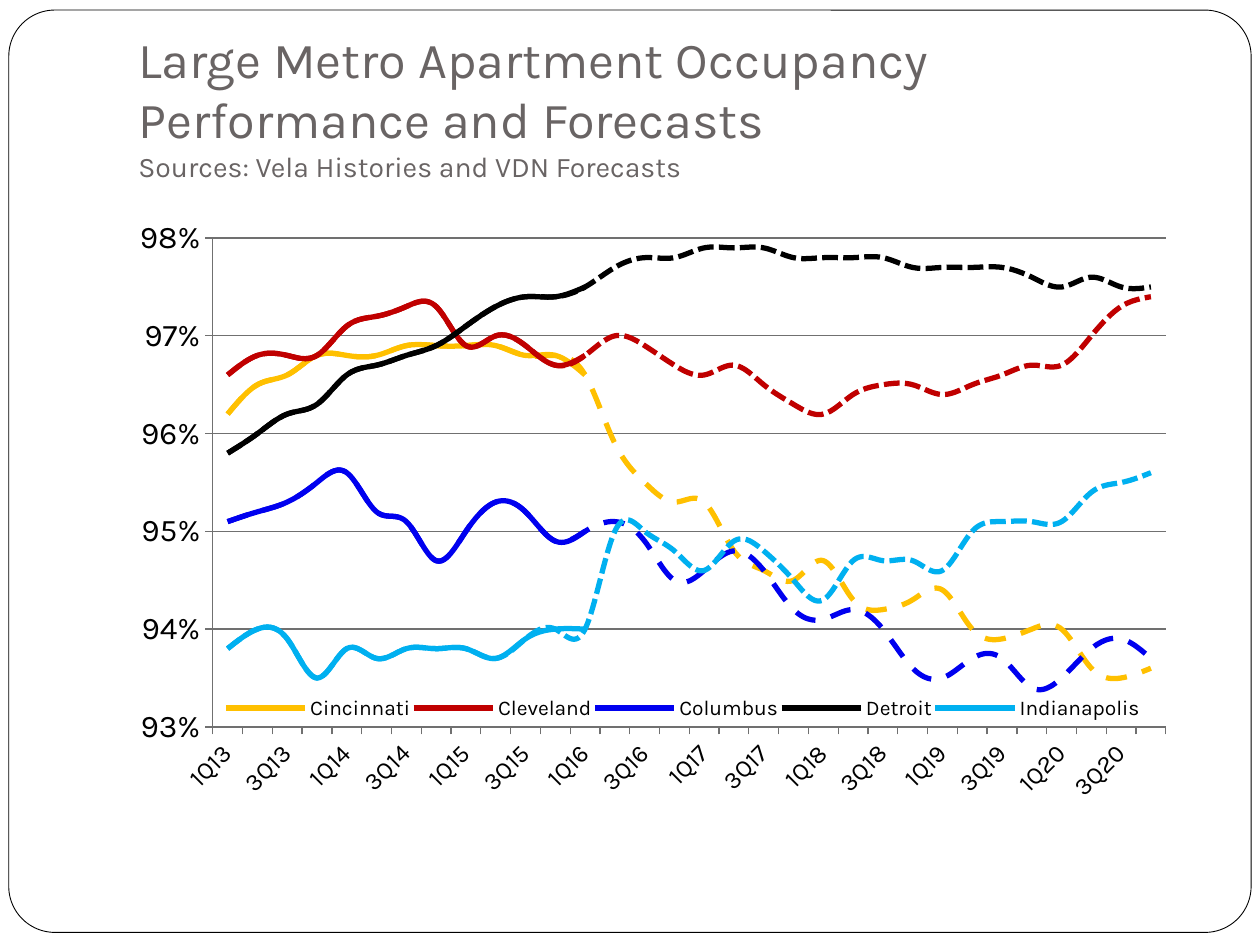
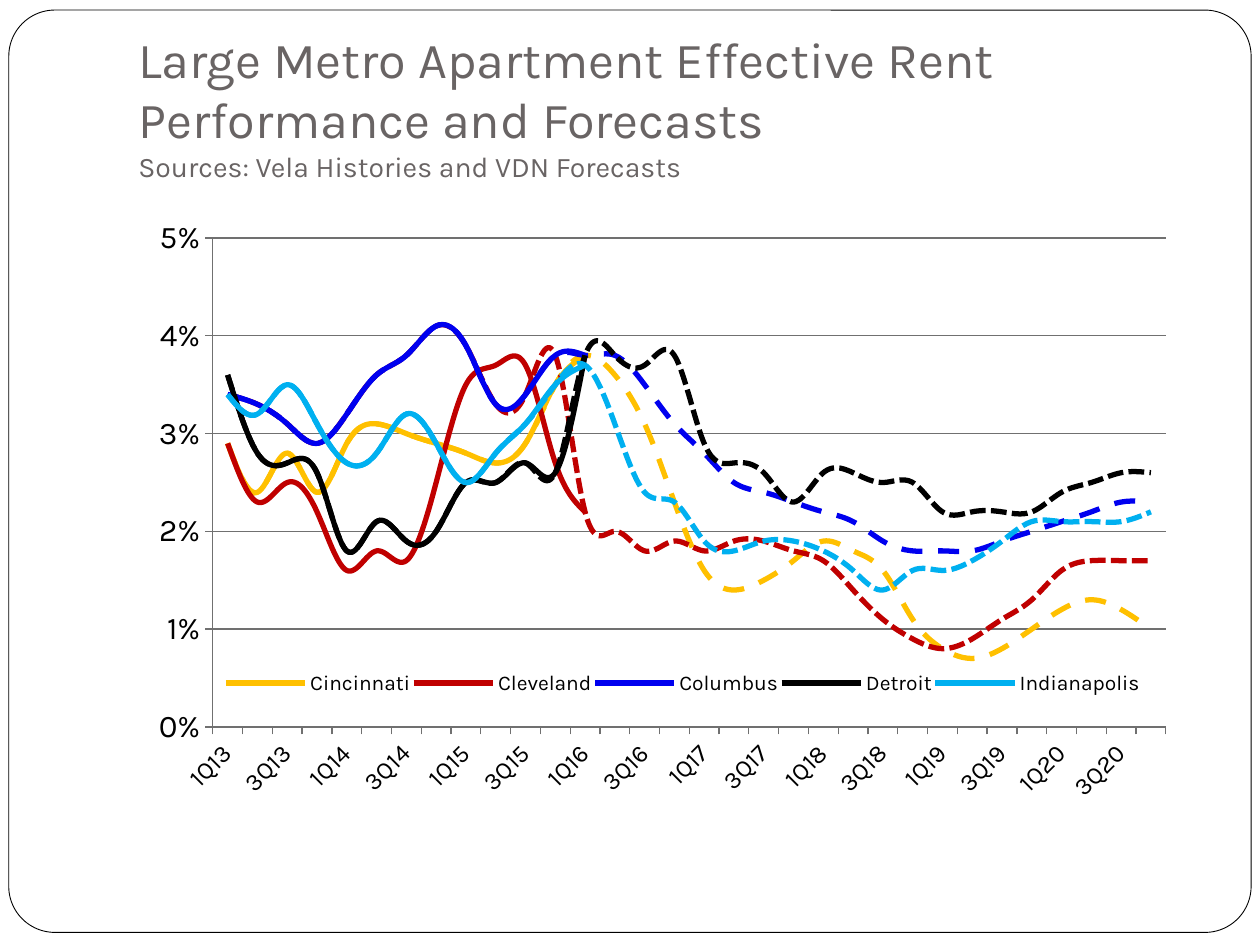
from lxml import etree
from pptx import Presentation
from pptx.chart.data import CategoryChartData
from pptx.dml.color import RGBColor
from pptx.enum.chart import XL_CHART_TYPE, XL_LEGEND_POSITION, XL_TICK_MARK
from pptx.enum.dml import MSO_LINE
from pptx.enum.shapes import MSO_SHAPE
from pptx.enum.text import MSO_ANCHOR
from pptx.oxml import parse_xml
from pptx.oxml.ns import qn
from pptx.util import Inches, Pt

FONT = "Karla"
BLACK, WHITE, TITLE_GREY, GRID_GREY = "000000", "FFFFFF", "696464", "707070"
FRAME_BOX = (0.07, 0.08, 9.86, 7.32)
TITLE_BOX = (1, 0.3, 8.5, 1.25)
CHART_BOX = (1, 1.67, 8.5, 5)
PLOT_LAYOUT = (0.081, 0.044, 0.89, 0.776)
SOURCES = "Sources: Vela Histories and VDN Forecasts"

QUARTERS = [f"{q}Q{year}" for year in range(13, 21) for q in range(1, 5)]
HISTORY_LENGTH = 13  # 1Q13 to 1Q16

# City: line colour and dash of its forecast
CITIES = {
    "Cincinnati": ("FFC000", MSO_LINE.DASH),
    "Cleveland": ("C00000", MSO_LINE.SQUARE_DOT),
    "Columbus": ("0000EF", MSO_LINE.DASH),
    "Detroit": ("000000", MSO_LINE.SQUARE_DOT),
    "Indianapolis": ("00B0F0", MSO_LINE.SQUARE_DOT),
}

# Quarterly values in tenths of a percent
OCCUPANCY = {
    "Cincinnati": [962, 965, 966, 968, 968, 968, 969, 969, 969, 969, 968,
                   968, 966, 959, 955, 953, 953, 948, 946, 945, 947, 943,
                   942, 943, 944, 940, 939, 940, 940, 936, 935, 936],
    "Cleveland": [966, 968, 968, 968, 971, 972, 973, 973, 969, 970, 969,
                  967, 968, 970, 969, 967, 966, 967, 965, 963, 962, 964,
                  965, 965, 964, 965, 966, 967, 967, 970, 973, 974],
    "Columbus": [951, 952, 953, 955, 956, 952, 951, 947, 950, 953, 952,
                 949, 950, 951, 949, 945, 946, 948, 946, 942, 941, 942,
                 940, 936, 935, 937, 937, 934, 935, 938, 939, 937],
    "Detroit": [958, 960, 962, 963, 966, 967, 968, 969, 971, 973, 974,
                974, 975, 977, 978, 978, 979, 979, 979, 978, 978, 978,
                978, 977, 977, 977, 977, 976, 975, 976, 975, 975],
    "Indianapolis": [938, 940, 939, 935, 938, 937, 938, 938, 938, 937, 939,
                     940, 940, 950, 950, 948, 946, 949, 948, 945, 943, 947,
                     947, 947, 946, 950, 951, 951, 951, 954, 955, 956],
}
RENT = {
    "Cincinnati": [29, 24, 28, 24, 29, 31, 30, 29, 28, 27, 29,
                   35, 38, 36, 31, 23, 16, 14, 15, 17, 19, 18,
                   16, 11, 8, 7, 8, 10, 12, 13, 12, 10],
    "Cleveland": [34, 33, 31, 29, 32, 36, 38, 41, 39, 33, 34,
                  38, 22, 20, 18, 19, 18, 19, 19, 18, 17, 14,
                  11, 9, 8, 9, 11, 13, 16, 17, 17, 17],
    "Columbus": [34, 33, 31, 29, 32, 36, 38, 41, 39, 33, 34,
                 38, 38, 38, 35, 31, 28, 25, 24, 23, 22, 21,
                 19, 18, 18, 18, 19, 20, 21, 22, 23, 23],
    "Detroit": [36, 28, 27, 26, 18, 21, 19, 20, 25, 25, 27,
                26, 38, 38, 37, 38, 29, 27, 26, 23, 26, 26,
                25, 25, 22, 22, 22, 22, 24, 25, 26, 26],
    "Indianapolis": [34, 32, 35, 31, 27, 28, 32, 29, 25, 28, 31,
                     35, 37, 31, 24, 23, 19, 18, 19, 19, 18, 16,
                     14, 16, 16, 17, 19, 21, 21, 21, 21, 22],
}
# Histories that differ from the start of the forecast line
RENT_HISTORY = {
    "Cleveland": [29, 23, 25, 22, 16, 18, 17, 25, 35, 37, 37, 27, 22],
}


def rgb(value):
    return RGBColor.from_string(value)


def inches(box):
    return [Inches(v) for v in box]


def style_font(font, size, color):
    font.name, font.size = FONT, Pt(size)
    font.color.rgb = rgb(color)


def style_line(line, color, width):
    line.color.rgb = rgb(color)
    line.width = Pt(width)


def chart_element(tag, val):
    element = etree.Element(qn(tag))
    element.set("val", str(val))
    return element


def manual_layout(box, inner=False):
    """Layout element for a box given as fractions of the chart."""
    target = '<c:layoutTarget val="inner"/>' if inner else ""
    modes = "".join(f'<c:{k}Mode val="edge"/>' for k in "xy")
    sizes = "".join(f'<c:{k} val="{v}"/>' for k, v in zip("xywh", box))
    return parse_xml(
        '<c:layout xmlns:c="http://schemas.openxmlformats.org/drawingml/2006/chart">'
        f"<c:manualLayout>{target}{modes}{sizes}</c:manualLayout></c:layout>")


def add_frame(s, box):
    frame = s.shapes.add_shape(MSO_SHAPE.ROUNDED_RECTANGLE, *inches(box))
    frame.adjustments[0] = 0.05
    frame.shadow.inherit = False
    frame.fill.solid()
    frame.fill.fore_color.rgb = rgb(WHITE)
    style_line(frame.line, BLACK, 0.5)


def add_title(s, box, title):
    tf = s.shapes.add_textbox(*inches(box)).text_frame
    tf.word_wrap = True
    tf.vertical_anchor = MSO_ANCHOR.BOTTOM
    tf.margin_bottom = Inches(0.1)
    p = tf.paragraphs[0]
    r = p.add_run()
    r.text = title
    style_font(r.font, 28.8, TITLE_GREY)
    p.add_line_break()
    r = p.add_run()
    r.text = SOURCES
    style_font(r.font, 16.2, TITLE_GREY)


def city_chart_data(forecasts, histories):
    data = CategoryChartData(number_format="0.0%")
    data.categories = QUARTERS
    for i, city in enumerate(CITIES):
        forecast = forecasts[city]
        history = histories.get(city, forecast[:HISTORY_LENGTH])
        gap = [None] * (len(QUARTERS) - HISTORY_LENGTH)
        data.add_series(city, [v / 1000 for v in history] + gap)
        data.add_series(f"Series {2 * i + 2}", [v / 1000 for v in forecast])
    return data


def style_axes(chart, low, high):
    values, quarters = chart.value_axis, chart.category_axis
    values.minimum_scale, values.maximum_scale = low, high
    values.major_unit = 0.01
    values.tick_labels.number_format = "0%"
    values.tick_labels.number_format_is_linked = False
    values.has_major_gridlines = True
    style_line(values.major_gridlines.format.line, GRID_GREY, 0.75)
    for axis, size in ((values, 18), (quarters, 14)):
        axis.major_tick_mark = XL_TICK_MARK.OUTSIDE
        axis.minor_tick_mark = XL_TICK_MARK.NONE
        style_line(axis.format.line, GRID_GREY, 0.75)
        style_font(axis.tick_labels.font, size, BLACK)
    # Slanted labels on every second quarter
    axis_xml = quarters._element
    axis_xml.find(qn("c:txPr")).find(qn("a:bodyPr")).set("rot", "-2700000")
    axis_xml.find(qn("c:noMultiLvlLbl")).addprevious(
        chart_element("c:tickLblSkip", 2))


def style_legend(chart, top):
    chart.has_legend = True
    legend = chart.legend
    legend.position = XL_LEGEND_POSITION.RIGHT
    legend.include_in_layout = True
    style_font(legend.font, 12, BLACK)
    # Only the history lines are listed
    position = legend._element.find(qn("c:legendPos"))
    for old in legend._element.findall(qn("c:layout")):
        legend._element.remove(old)
    position.addnext(manual_layout((0.09, top, 0.86, 0.06)))
    for i in reversed(range(1, 2 * len(CITIES), 2)):
        entry = etree.Element(qn("c:legendEntry"))
        entry.append(chart_element("c:idx", i))
        entry.append(chart_element("c:delete", 1))
        position.addnext(entry)


def add_city_chart(s, box, data, low, high, legend_top):
    chart = s.shapes.add_chart(XL_CHART_TYPE.LINE, *inches(box), data).chart
    chart.has_title = False
    style_font(chart.font, 18, BLACK)
    plot = chart.plots[0]
    plot.vary_by_categories = False
    # Solid history and dashed forecast for each city
    for i, (color, dash) in enumerate(CITIES.values()):
        history, forecast = plot.series[2 * i], plot.series[2 * i + 1]
        for series in (history, forecast):
            series.smooth = True
            style_line(series.format.line, color, 3)
        forecast.format.line.dash_style = dash
    style_axes(chart, low, high)
    style_legend(chart, legend_top)
    plot_area = chart._chartSpace.chart.plotArea
    for old in plot_area.findall(qn("c:layout")):
        plot_area.remove(old)
    plot_area.insert(0, manual_layout(PLOT_LAYOUT, inner=True))


def add_chart_slide(prs, title, data, low, high, legend_top):
    s = prs.slides.add_slide(prs.slide_layouts[6])
    add_frame(s, FRAME_BOX)
    add_title(s, TITLE_BOX, title)
    add_city_chart(s, CHART_BOX, data, low, high, legend_top)


def main():
    prs = Presentation()
    prs.slide_width, prs.slide_height = Inches(10), Inches(7.5)
    add_chart_slide(
        prs, "Large Metro Apartment Occupancy Performance and Forecasts",
        city_chart_data(OCCUPANCY, {}), 0.93, 0.98, 0.76)
    add_chart_slide(
        prs, "Large Metro Apartment Effective Rent Performance and Forecasts",
        city_chart_data(RENT, RENT_HISTORY), 0, 0.05, 0.72)
    prs.save("out.pptx")


if __name__ == "__main__":
    main()
